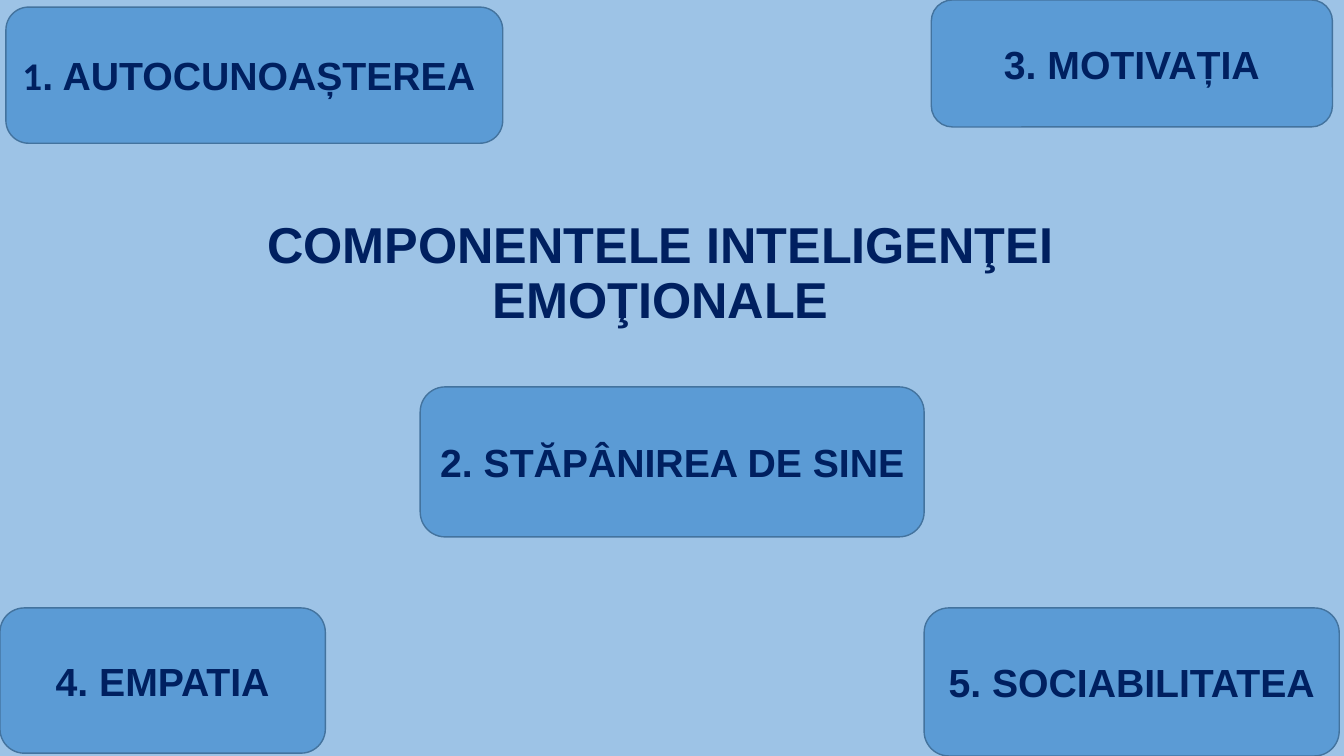
from pptx import Presentation
from pptx import util as u
from pptx.dml.color import RGBColor
from pptx.enum import shapes, text

COLORS = {"back": "9DC3E6", "box": "5B9BD5", "edge": "43739E", "ink": "002060"}


class Deck:
    """Slide style and the current slide."""

    def __init__(self):
        self.prs = Presentation()
        self.prs.slide_width, self.prs.slide_height = u.Cm(33.87), u.Cm(19.05)
        self.s = self.prs.slides.add_slide(self.prs.slide_layouts[5])
        self.paint(self.s.background.fill, "back")

    def paint(self, fill, name):
        fill.solid()
        fill.fore_color.rgb = RGBColor.from_string(COLORS[name])

    def label(self, tf, runs, size, align):
        tf.word_wrap = True
        tf.auto_size = text.MSO_AUTO_SIZE.NONE
        tf.vertical_anchor = text.MSO_ANCHOR.MIDDLE
        p = tf.paragraphs[0]
        p.alignment = align
        for words, font in runs:
            r = p.add_run()
            r.text = words
            r.font.name, r.font.size, r.font.bold = font, u.Pt(size), True
            r.font.color.rgb = RGBColor.from_string(COLORS["ink"])
        return p

    def title(self, words, *place):
        sp = self.s.shapes.title
        sp.left, sp.top, sp.width, sp.height = map(u.Cm, place)
        p = self.label(sp.text_frame, [(words, "Arial")], 36, text.PP_ALIGN.CENTER)
        p.line_spacing = 0.9

    def box(self, runs, place, align=text.PP_ALIGN.CENTER):
        sp = self.s.shapes.add_shape(
            shapes.MSO_SHAPE.ROUNDED_RECTANGLE, *map(u.Cm, place))
        sp.shadow.inherit = False
        self.paint(sp.fill, "box")
        self.paint(sp.line.fill, "edge")
        sp.line.width = u.Pt(1)
        self.label(sp.text_frame, runs, 28, align)


def main():
    deck = Deck()

    # Title
    deck.title("COMPONENTELE INTELIGENŢEI EMOŢIONALE", 4.8, 4.83, 23.7, 4.19)

    # First component, left aligned with its own numeral font
    deck.box([("1", "Calibri"), (". AUTOCUNOAȘTEREA", "Arial")],
             (0.15, 0.18, 12.52, 3.43), text.PP_ALIGN.LEFT)

    # Remaining components: left, top, width, height in cm
    components = {
        "2. STĂPÂNIREA DE SINE": (10.59, 9.75, 12.7, 3.78),
        "3. MOTIVAȚIA": (23.47, 0, 10.11, 3.2),
        "4. EMPATIA": (0, 15.32, 8.2, 3.66),
        "5. SOCIABILITATEA": (23.29, 15.32, 10.46, 3.73),
    }
    for words, place in components.items():
        deck.box([(words, "Arial")], place)

    deck.prs.save("out.pptx")


if __name__ == "__main__":
    main()
